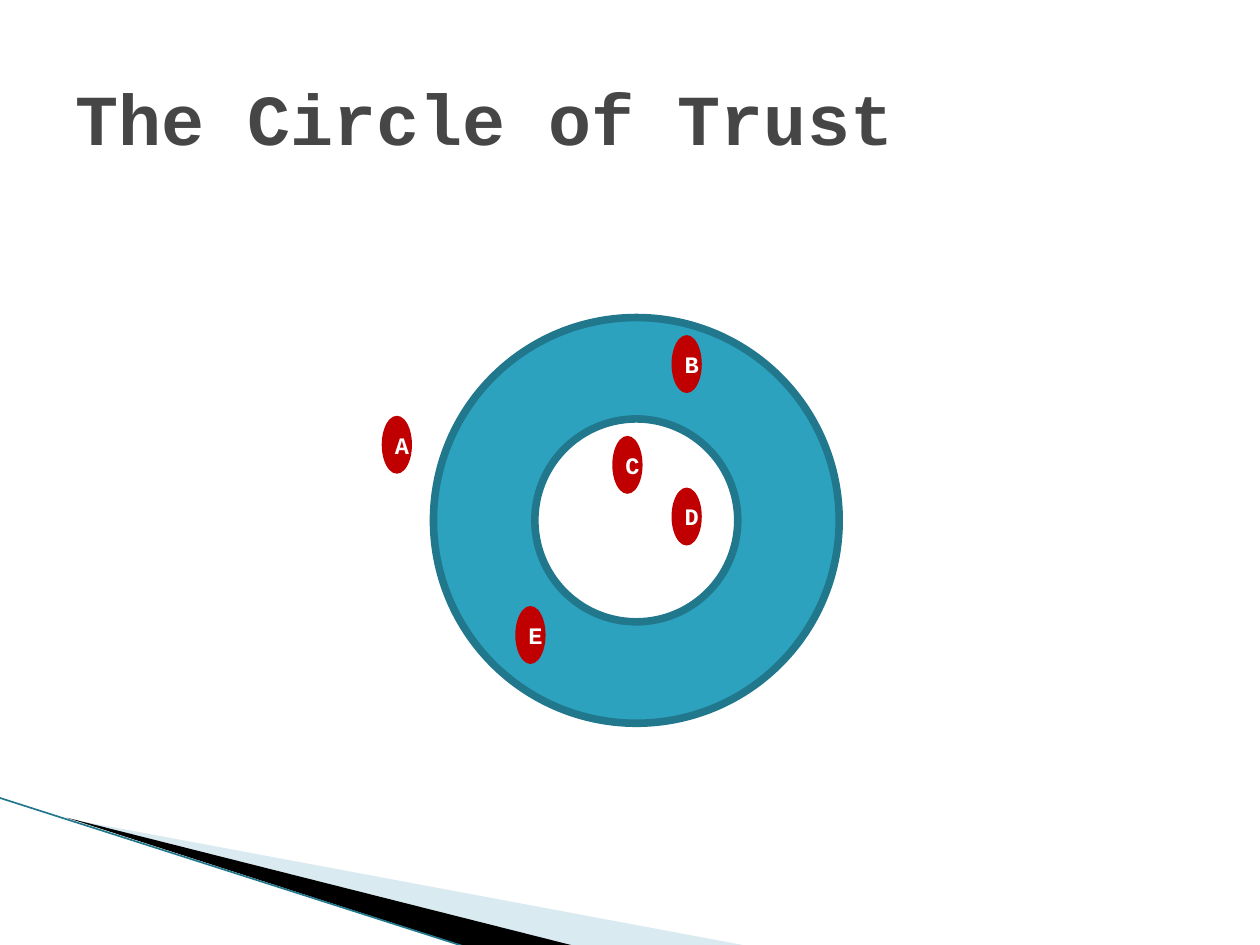
from lxml.etree import SubElement
from pptx import Presentation
from pptx.dml.color import RGBColor
from pptx.enum.shapes import MSO_CONNECTOR, MSO_SHAPE
from pptx.enum.text import MSO_ANCHOR, PP_ALIGN
from pptx.oxml.ns import qn
from pptx.util import Inches, Pt

TEAL = RGBColor(0x2D, 0xA2, 0xBF)
DARK_TEAL = RGBColor(0x21, 0x78, 0x8D)
PALE_BLUE = RGBColor(0xA0, 0xCB, 0xDC)
RED = RGBColor(0xC0, 0x00, 0x00)
GREY = RGBColor(0x46, 0x46, 0x46)
BLACK = RGBColor(0x00, 0x00, 0x00)
WHITE = RGBColor(0xFF, 0xFF, 0xFF)

MARKERS = {
    "A": (3.03, 3.3),
    "B": (5.33, 2.66),
    "C": (4.86, 3.46),
    "D": (5.33, 3.87),
    "E": (4.09, 4.81),
}


class SlideBuilder:
    font_name = "Courier New"

    def __init__(self, slide):
        self.slide = slide

    def style_text(self, paragraph, text, size, color):
        paragraph.text = text
        font = paragraph.font
        font.name, font.size, font.bold = self.font_name, Pt(size), True
        font.color.rgb = color

    def title(self, text):
        box = self.slide.shapes.add_textbox(Inches(0.5), Inches(0.3), Inches(9), Inches(1.25))
        frame = box.text_frame
        frame.word_wrap = True
        frame.vertical_anchor = MSO_ANCHOR.MIDDLE
        self.style_text(frame.paragraphs[0], text, 41, GREY)

    def shape(self, kind, left, top, width, height, fill):
        shape = self.slide.shapes.add_shape(
            kind, Inches(left), Inches(top), Inches(width), Inches(height))
        shape.shadow.inherit = False
        shape.fill.solid()
        shape.fill.fore_color.rgb = fill
        shape.line.fill.background()
        return shape

    def ring(self, left, top, diameter):
        ring = self.shape(MSO_SHAPE.DONUT, left, top, diameter, diameter, TEAL)
        ring.line.color.rgb = DARK_TEAL
        ring.line.width = Pt(4.33)

    def marker(self, letter, left, top):
        marker = self.shape(MSO_SHAPE.OVAL, left, top, 0.24, 0.46, RED)
        frame = marker.text_frame
        frame.word_wrap = False
        frame.vertical_anchor = MSO_ANCHOR.MIDDLE
        frame.margin_left = Inches(0.08)
        frame.margin_right = frame.margin_top = frame.margin_bottom = 0
        paragraph = frame.paragraphs[0]
        paragraph.alignment = PP_ALIGN.CENTER
        self.style_text(paragraph, letter, 13.5, WHITE)

    def band(self, points, color, opacity=100):
        corners = [(Inches(x), Inches(y)) for x, y in points]
        builder = self.slide.shapes.build_freeform(*corners[0])
        builder.add_line_segments(corners[1:], close=True)
        band = builder.convert_to_shape()
        band.shadow.inherit = False
        band.fill.solid()
        band.fill.fore_color.rgb = color
        band.line.fill.background()
        if opacity < 100:
            color_element = band.fill._xPr.find(qn("a:solidFill"))[0]
            SubElement(color_element, qn("a:alpha"), val=str(opacity * 1000))

    def line(self, start, end, color, width):
        line = self.slide.shapes.add_connector(
            MSO_CONNECTOR.STRAIGHT, *(Inches(value) for value in (*start, *end)))
        line.line.color.rgb = color
        line.line.width = Pt(width)
        SubElement(line._element.spPr, qn("a:effectLst"))


def main():
    presentation = Presentation()
    presentation.slide_width, presentation.slide_height = Inches(10), Inches(7.5)
    builder = SlideBuilder(presentation.slides.add_slide(presentation.slide_layouts[6]))

    builder.band([(0.55, 6.5), (5.95, 7.51), (4.56, 7.51)], PALE_BLUE, opacity=40)
    builder.band([(0.53, 6.49), (4.57, 7.51), (3.72, 7.52)], BLACK)
    builder.line((-0.01, 6.33), (3.71, 7.52), DARK_TEAL, 0.95)

    builder.title("The Circle of Trust")
    builder.ring(3.44, 2.52, 3.22)
    for letter, (left, top) in MARKERS.items():
        builder.marker(letter, left, top)

    presentation.save("out.pptx")


if __name__ == "__main__":
    main()
